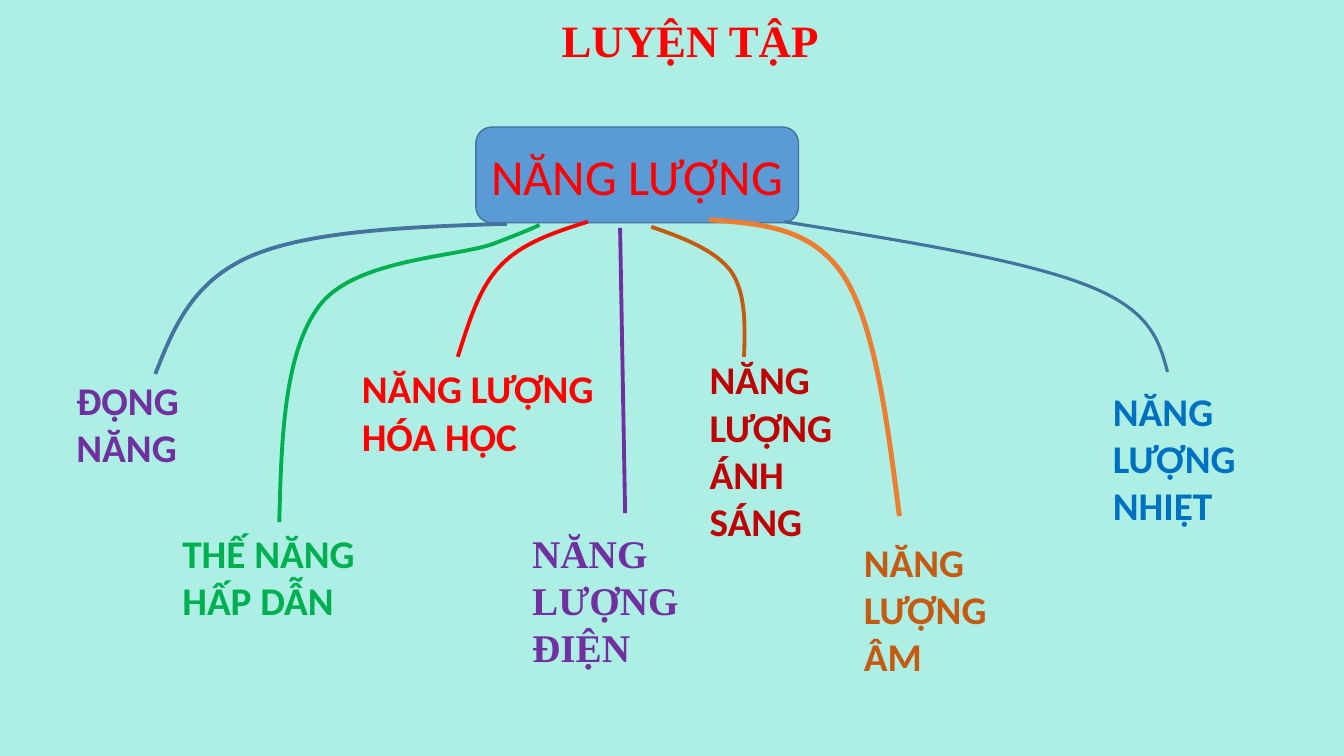
from lxml import etree
from pptx import Presentation
from pptx.dml.color import RGBColor
from pptx.enum.shapes import MSO_CONNECTOR, MSO_SHAPE
from pptx.enum.text import MSO_ANCHOR, PP_ALIGN
from pptx.oxml.ns import qn
from pptx.util import Inches, Pt

CENTER, LEFT = PP_ALIGN.CENTER, PP_ALIGN.LEFT
MIDDLE, TOP = MSO_ANCHOR.MIDDLE, MSO_ANCHOR.TOP
ROUNDED, STRAIGHT = MSO_SHAPE.ROUNDED_RECTANGLE, MSO_CONNECTOR.STRAIGHT
SERIF, SANS = "Times New Roman", "Calibri"

COLORS = {
    "background": "ADEFE4", "box": "5B9BD5", "outline": "43739E",
    "red": "FF0000", "purple": "7030A0", "green": "00B050",
    "dark_red": "C00000", "brown": "C55A11", "orange": "ED7D31",
    "blue": "0070C0",
}

TITLE = ("LUYỆN TẬP", (4.72, 0.05, 4.25, 0.75))
TOPIC = ("NĂNG LƯỢNG", (4.72, 1.26, 3.2, 0.95))

LABELS = [
    ("ĐỘNG NĂNG", (0.66, 3.68, 1.28, 1.04), "purple", SANS),
    ("THẾ NĂNG HẤP DẪN", (1.71, 5.2, 2.02, 1.04), "green", SANS),
    ("NĂNG LƯỢNG HÓA HỌC", (3.49, 3.57, 2.54, 1.04), "red", SANS),
    ("NĂNG LƯỢNG ĐIỆN", (5.18, 5.2, 1.75, 1.51), "purple", SERIF),
    ("NĂNG LƯỢNG ÁNH SÁNG", (6.94, 3.48, 1.46, 1.99), "dark_red", SANS),
    ("NĂNG LƯỢNG ÂM", (8.47, 5.29, 1.52, 1.51), "brown", SANS),
    ("NĂNG LƯỢNG NHIỆT", (10.94, 3.79, 1.51, 1.51), "blue", SANS),
]

CURVES = [
    ("outline", 2.75, [(5.03, 2.22), (4.05, 2.25), (3.07, 2.29), (2.49, 2.54),
                       (1.91, 2.79), (1.72, 3.25), (1.54, 3.71)]),
    ("outline", 2.25, [(7.78, 2.2), (8.97, 2.39), (10.15, 2.58), (10.78, 2.83),
                       (11.42, 3.08), (11.5, 3.39), (11.58, 3.69)]),
    ("green", 2.75, [(5.35, 2.23), (5.31, 2.26), (4.89, 2.42), (4.89, 2.42),
                     (4.53, 2.55), (3.52, 2.57), (3.17, 3.03),
                     (2.82, 3.49), (2.79, 4.34), (2.77, 5.18)]),
    ("red", 2.75, [(5.83, 2.2), (5.51, 2.3), (5.18, 2.41), (4.97, 2.63),
                   (4.75, 2.85), (4.65, 3.2), (4.54, 3.54)]),
    ("brown", 2.75, [(6.46, 2.25), (6.78, 2.36), (7.09, 2.48), (7.25, 2.69),
                     (7.4, 2.91), (7.39, 3.22), (7.38, 3.54)]),
    ("orange", 3.5, [(7.03, 2.18), (7.54, 2.22), (8.05, 2.25), (8.37, 2.74),
                     (8.68, 3.23), (8.8, 4.18), (8.92, 5.12)]),
]
STEM = ("purple", 2.75, [(6.15, 2.26), (6.2, 5.09)])


def rgb(name):
    return RGBColor.from_string(COLORS[name])


def set_line(sp, color, width):
    sp.line.color.rgb = rgb(color)
    sp.line.width = Pt(width)


def write(sp, text, size=28, font=SANS, color="red", bold=True,
          align=LEFT, anchor=TOP, spacing=1.0):
    tf = sp.text_frame
    tf.word_wrap = True
    tf.vertical_anchor = anchor
    p = tf.paragraphs[0]
    p.alignment = align
    p.line_spacing = spacing
    r = p.add_run()
    r.text = text
    r.font.size = Pt(size)
    r.font.name = font
    r.font.bold = bold
    r.font.color.rgb = rgb(color)


def add_text(shapes, text, box, **fmt):
    write(shapes.add_textbox(*map(Inches, box)), text, **fmt)


def add_curve(shapes, color, width, points):
    start, *rest = [(Inches(x), Inches(y)) for x, y in points]
    builder = shapes.build_freeform(*start)
    builder.add_line_segments(rest, close=False)
    sp = builder.convert_to_shape()
    segments = list(sp._element.iter(qn("a:lnTo")))
    for first, second, third in zip(*[iter(segments)] * 3):
        first.tag = qn("a:cubicBezTo")
        for segment in (second, third):
            first.append(segment[0])
            segment.getparent().remove(segment)
    sp.fill.background()
    sp.shadow.inherit = False
    set_line(sp, color, width)


def add_stem(shapes, color, width, points):
    ends = [Inches(v) for point in points for v in point]
    line = shapes.add_connector(STRAIGHT, *ends)
    set_line(line, color, width)
    etree.SubElement(line._element.spPr, qn("a:effectLst"))


def main():
    prs = Presentation()
    prs.slide_width, prs.slide_height = Inches(13.33), Inches(7.5)
    s = prs.slides.add_slide(prs.slide_layouts[6])
    s.background.fill.solid()
    s.background.fill.fore_color.rgb = rgb("background")
    shapes = s.shapes

    add_text(shapes, *TITLE, size=32, font=SERIF, align=CENTER,
             anchor=MIDDLE, spacing=0.9)

    text, box = TOPIC
    sp = shapes.add_shape(ROUNDED, *map(Inches, box))
    sp.shadow.inherit = False
    sp.fill.solid()
    sp.fill.fore_color.rgb = rgb("box")
    set_line(sp, "outline", 1)
    write(sp, text, size=36, bold=False, align=CENTER, anchor=MIDDLE)

    for curve in CURVES:
        add_curve(shapes, *curve)
    add_stem(shapes, *STEM)
    for text, box, color, font in LABELS:
        add_text(shapes, text, box, color=color, font=font)

    prs.save("out.pptx")


if __name__ == "__main__":
    main()
